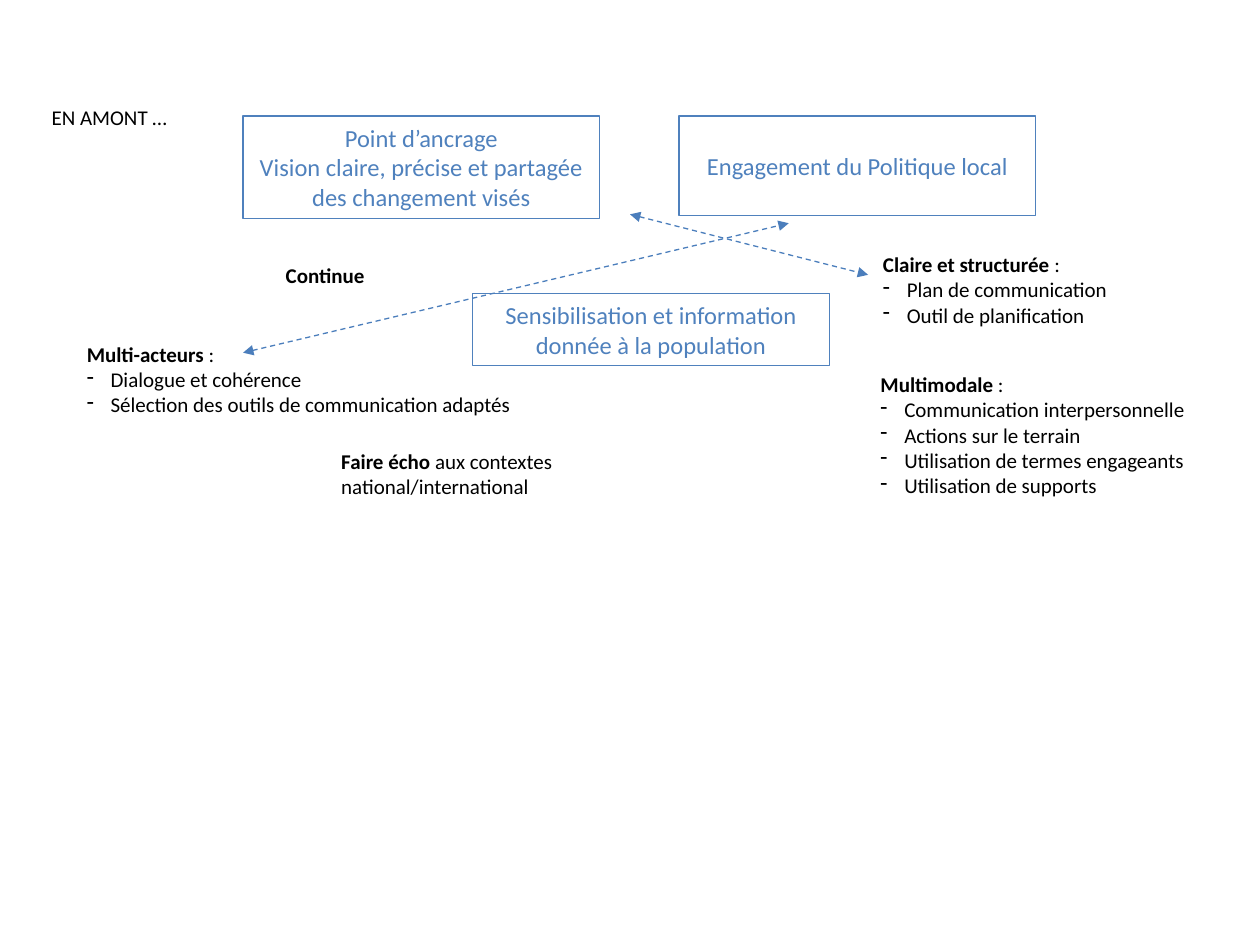
from lxml.etree import SubElement
from pptx import Presentation
from pptx.dml.color import RGBColor
from pptx.enum.dml import MSO_LINE
from pptx.enum.shapes import MSO_CONNECTOR, MSO_SHAPE
from pptx.enum.text import MSO_ANCHOR, PP_ALIGN
from pptx.oxml.ns import qn
from pptx.util import Cm, Pt

BLUE = RGBColor(0x4F, 0x81, 0xBD)
ARROW_BLUE = RGBColor(0x4B, 0x7E, 0xBC)
BLACK = RGBColor(0, 0, 0)
FONT = "Calibri"
BOX_WIDTH = 7.19
BULLET_INDENT = Cm(0.48)

# left, top, height, paragraphs
THEMES = [
    (4.9, 2.34, 2.06, ["Point d’ancrage",
                       "Vision claire, précise et partagée des changement visés"]),
    (13.69, 2.34, 2.01, ["Engagement du Politique local"]),
    (9.53, 5.92, 1.45, ["Sensibilisation et information donnée à la population"]),
]

# (left, top, width, height), bold lead, plain rest, bulleted items
NOTES = [
    ((17.55, 4.95, BOX_WIDTH, 1.8), "Claire et structurée ", ":",
     ["Plan de communication", "Outil de planification"]),
    ((1.5, 6.76, 9.4, 1.8), "Multi-acteurs", " :",
     ["Dialogue et cohérence", "Sélection des outils de communication adaptés"]),
    ((5.51, 5.16, BOX_WIDTH, 0.76), "Continue", "", []),
    ((17.5, 7.37, BOX_WIDTH, 2.82), "Multimodale", " :",
     ["Communication interpersonnelle", "Actions sur le terrain",
      "Utilisation de termes engageants", "Utilisation de supports"]),
    ((6.63, 8.92, 4.93, 1.27), "Faire écho ", "aux contextes national/international", []),
    ((0.79, 1.98, 3.3, 0.76), "", "EN AMONT …", []),
]

# start x, start y, end x, end y
ARROWS = [(12.7, 4.32, 17.5, 5.54), (4.9, 7.11, 15.9, 4.5)]


def add_span(para, text, color, size, bold=False):
    span = para.add_run()
    span.text = text
    span.font.color.rgb = color
    for name, value in {"name": FONT, "size": Pt(size), "bold": bold}.items():
        setattr(span.font, name, value)


def add_dash_bullet(para):
    properties = para._p.get_or_add_pPr()
    properties.set("marL", str(BULLET_INDENT))
    properties.set("indent", str(-BULLET_INDENT))
    SubElement(properties, qn("a:buFontTx"))
    SubElement(properties, qn("a:buChar"), char="-")


def add_theme(page, left, top, height, lines):
    box = page.shapes.add_shape(
        MSO_SHAPE.RECTANGLE, Cm(left), Cm(top), Cm(BOX_WIDTH), Cm(height))
    box.shadow.inherit = False
    box.fill.background()
    box.line.color.rgb = BLUE
    box.line.width = Pt(0.75)
    frame = box.text_frame
    frame.word_wrap = True
    frame.vertical_anchor = MSO_ANCHOR.MIDDLE
    for index, line in enumerate(lines):
        para = frame.add_paragraph() if index else frame.paragraphs[0]
        para.alignment = PP_ALIGN.CENTER
        add_span(para, line, BLUE, 14)


def add_note(page, area, lead, rest, items):
    box = page.shapes.add_textbox(*map(Cm, area))
    frame = box.text_frame
    frame.word_wrap = True
    heading = frame.paragraphs[0]
    for text, bold in ((lead, True), (rest, False)):
        if text:
            add_span(heading, text, BLACK, 12, bold)
    for item in items:
        para = frame.add_paragraph()
        add_dash_bullet(para)
        add_span(para, item, BLACK, 12)


def add_double_arrow(page, *ends):
    arrow = page.shapes.add_connector(MSO_CONNECTOR.STRAIGHT, *map(Cm, ends))
    arrow.line.color.rgb = ARROW_BLUE
    for name, value in {"width": Pt(0.75), "dash_style": MSO_LINE.DASH}.items():
        setattr(arrow.line, name, value)
    outline = arrow.line._get_or_add_ln()
    for tag in ("a:headEnd", "a:tailEnd"):
        SubElement(outline, qn(tag), type="triangle")
    SubElement(arrow._element.spPr, qn("a:effectLst"))


def main():
    deck = Presentation()
    deck.slide_width, deck.slide_height = Cm(25.4), Cm(19.05)
    page = deck.slides.add_slide(deck.slide_layouts[6])
    for theme in THEMES:
        add_theme(page, *theme)
    for note in NOTES:
        add_note(page, *note)
    for arrow in ARROWS:
        add_double_arrow(page, *arrow)
    deck.save("out.pptx")


if __name__ == "__main__":
    main()
